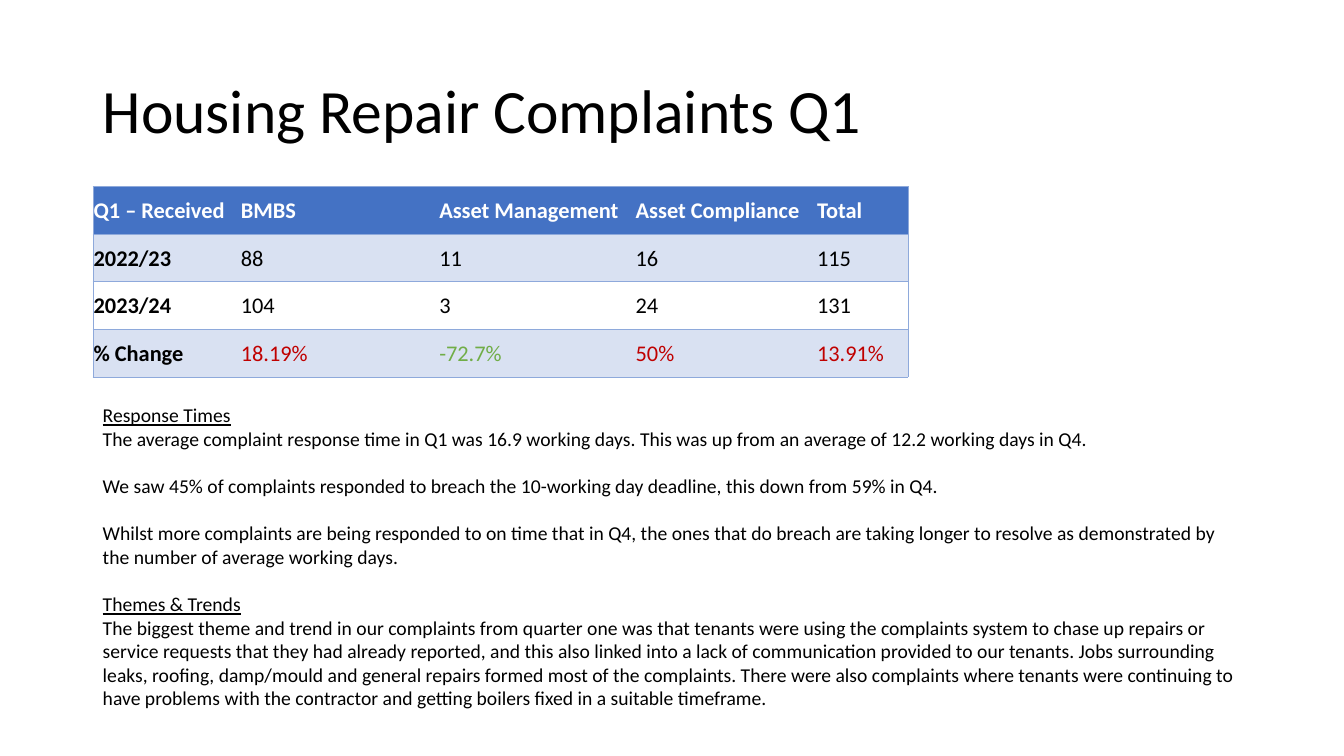
"""Build the Housing Repair Complaints Q1 slide."""
from dataclasses import dataclass

from lxml.etree import SubElement
from pptx import Presentation
from pptx.dml.color import RGBColor
from pptx.enum.text import MSO_ANCHOR
from pptx.oxml.ns import qn
from pptx.util import Cm, Pt

COLORS = {
    "text": "000000",
    "white": "FFFFFF",
    "header": "4472C4",
    "band": "D9E1F2",
    "border": "8EA9DB",
    "worse": "C00000",
    "better": "70AD47",
}
LEFT, WIDTH = 2.34, 29.21
COLUMN_WIDTHS = (3.71, 5, 4.95, 4.57, 2.31)
ROW_HEIGHT = 1.2


@dataclass(frozen=True)
class TableRow:
    values: tuple[str, ...]
    fill: str | None = None
    colors: tuple[str, ...] = ("text",) * 5
    bold: bool = False


@dataclass(frozen=True)
class Paragraph:
    text: str
    heading: bool = False
    gap: int = 0


ROWS = (
    TableRow(("Q1 – Received", "BMBS", "Asset Management", "Asset Compliance", "Total"),
             "header", ("white",) * 5, True),
    TableRow(("2022/23", "88", "11", "16", "115"), "band"),
    TableRow(("2023/24", "104", "3", "24", "131")),
    TableRow(("% Change", "18.19%", "-72.7%", "50%", "13.91%"),
             "band", ("text", "worse", "better", "worse", "worse")),
)
TITLE = Paragraph("Housing Repair Complaints Q1")
COMMENTARY = (
    Paragraph("Response Times", heading=True),
    Paragraph("The average complaint response time in Q1 was 16.9 working days. "
              "This was up from an average of 12.2 working days in Q4."),
    Paragraph("We saw 45% of complaints responded to breach the 10-working day deadline, "
              "this down from 59% in Q4.", gap=17),
    Paragraph("Whilst more complaints are being responded to on time that in Q4, the ones "
              "that do breach are taking longer to resolve as demonstrated by the number of "
              "average working days.", gap=17),
    Paragraph("Themes & Trends", heading=True, gap=17),
    Paragraph("The biggest theme and trend in our complaints from quarter one was that "
              "tenants were using the complaints system to chase up repairs or service "
              "requests that they had already reported, and this also linked into a lack of "
              "communication provided to our tenants. Jobs surrounding leaks, roofing, "
              "damp/mould and general repairs formed most of the complaints. There were also "
              "complaints where tenants were continuing to have problems with the contractor "
              "and getting boilers fixed in a suitable timeframe."),
)


def rgb(name: str) -> RGBColor:
    return RGBColor.from_string(COLORS[name])


def add_run(p, text: str, size: int, color: str = "text",
            bold: bool = False, underline: bool = False) -> None:
    r = p.add_run()
    r.text = text
    r.font.name = "Calibri"
    r.font.size = Pt(size)
    r.font.bold = bold
    r.font.underline = underline
    r.font.color.rgb = rgb(color)


def add_text(slide, top: float, height: float, paragraphs: tuple[Paragraph, ...],
             size: int, anchor: MSO_ANCHOR, spacing: float = 1.0) -> None:
    sp = slide.shapes.add_textbox(Cm(LEFT), Cm(top), Cm(WIDTH), Cm(height))
    tf = sp.text_frame
    tf.word_wrap = True
    tf.vertical_anchor = anchor
    for i, item in enumerate(paragraphs):
        p = tf.add_paragraph() if i else tf.paragraphs[0]
        p.line_spacing = spacing
        p.space_before = Pt(item.gap)
        add_run(p, item.text, size, underline=item.heading)


def set_borders(cell, visible: str) -> None:
    tc_pr = cell._tc.get_or_add_tcPr()
    for i, side in enumerate("LRTB"):
        ln = SubElement(tc_pr, qn(f"a:ln{side}"), w=str(Pt(0.5)))
        if side in visible:
            fill = SubElement(ln, qn("a:solidFill"))
            SubElement(fill, qn("a:srgbClr"), val=COLORS["border"])
        else:
            SubElement(ln, qn("a:noFill"))
        tc_pr.insert(i, ln)


def add_complaints_table(slide) -> None:
    frame = slide.shapes.add_table(len(ROWS), len(COLUMN_WIDTHS), Cm(LEFT), Cm(4.7),
                                   Cm(sum(COLUMN_WIDTHS)), Cm(ROW_HEIGHT * len(ROWS)))
    table = frame.table
    table.first_row = table.horz_banding = False
    for column, width in zip(table.columns, COLUMN_WIDTHS):
        column.width = Cm(width)
    last = len(COLUMN_WIDTHS) - 1
    for i, row in enumerate(ROWS):
        table.rows[i].height = Cm(ROW_HEIGHT)
        for j, (value, color) in enumerate(zip(row.values, row.colors)):
            cell = table.cell(i, j)
            cell.margin_left = cell.margin_right = cell.margin_top = Cm(0.02)
            cell.margin_bottom = 0
            cell.vertical_anchor = MSO_ANCHOR.MIDDLE
            if row.fill:
                cell.fill.solid()
                cell.fill.fore_color.rgb = rgb(row.fill)
            else:
                cell.fill.background()
            set_borders(cell, "TB" + {0: "L", last: "R"}.get(j, ""))
            add_run(cell.text_frame.paragraphs[0], value, 16, color, row.bold or j == 0)


def main() -> None:
    prs = Presentation()
    prs.slide_width, prs.slide_height = Cm(33.87), Cm(19.05)
    slide = prs.slides.add_slide(prs.slide_layouts[6])
    add_text(slide, 1.01, 3.68, (TITLE,), 44, MSO_ANCHOR.MIDDLE, 0.9)
    add_text(slide, 10.03, 8.64, COMMENTARY, 14, MSO_ANCHOR.TOP)
    add_complaints_table(slide)
    prs.save("out.pptx")


if __name__ == "__main__":
    main()
